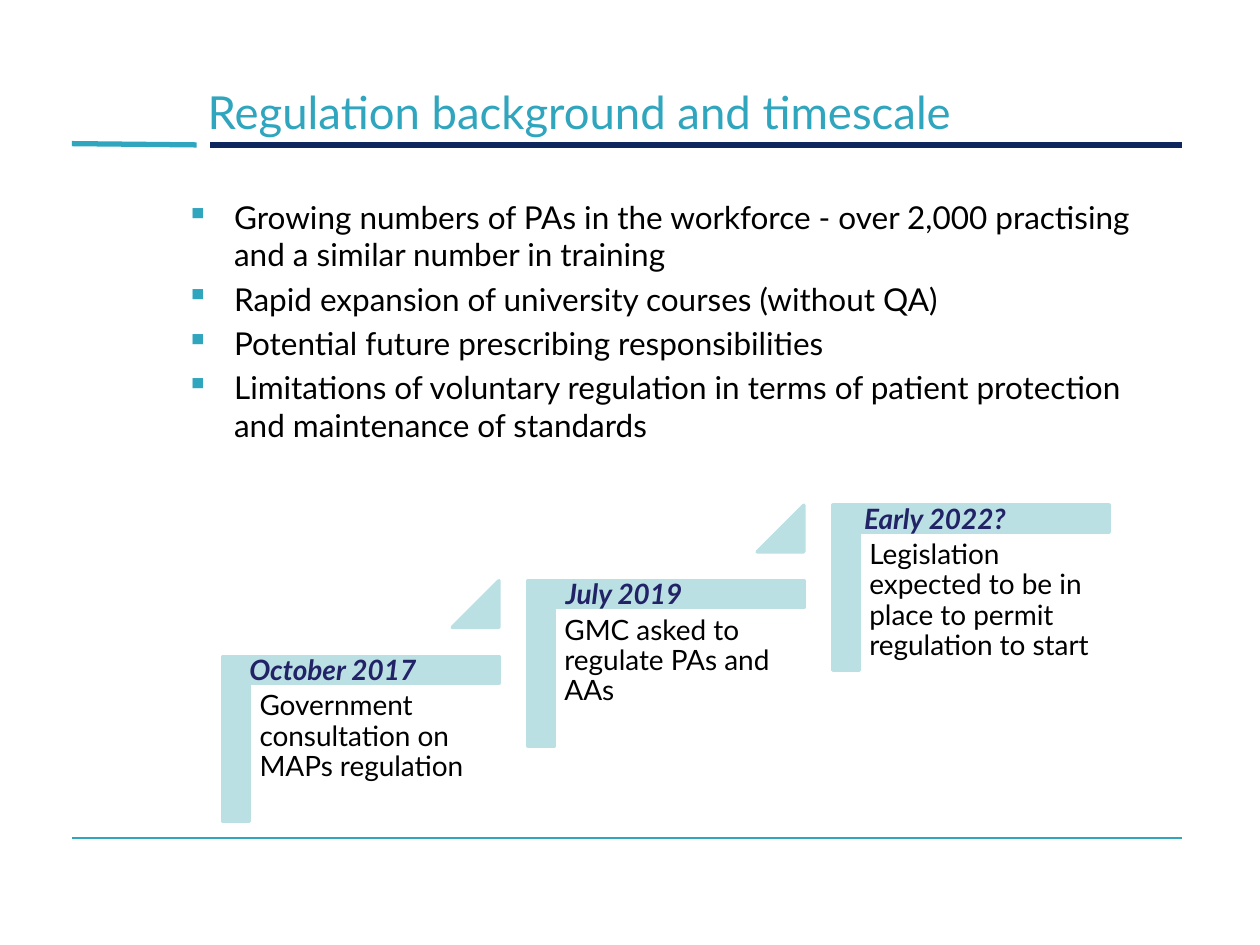
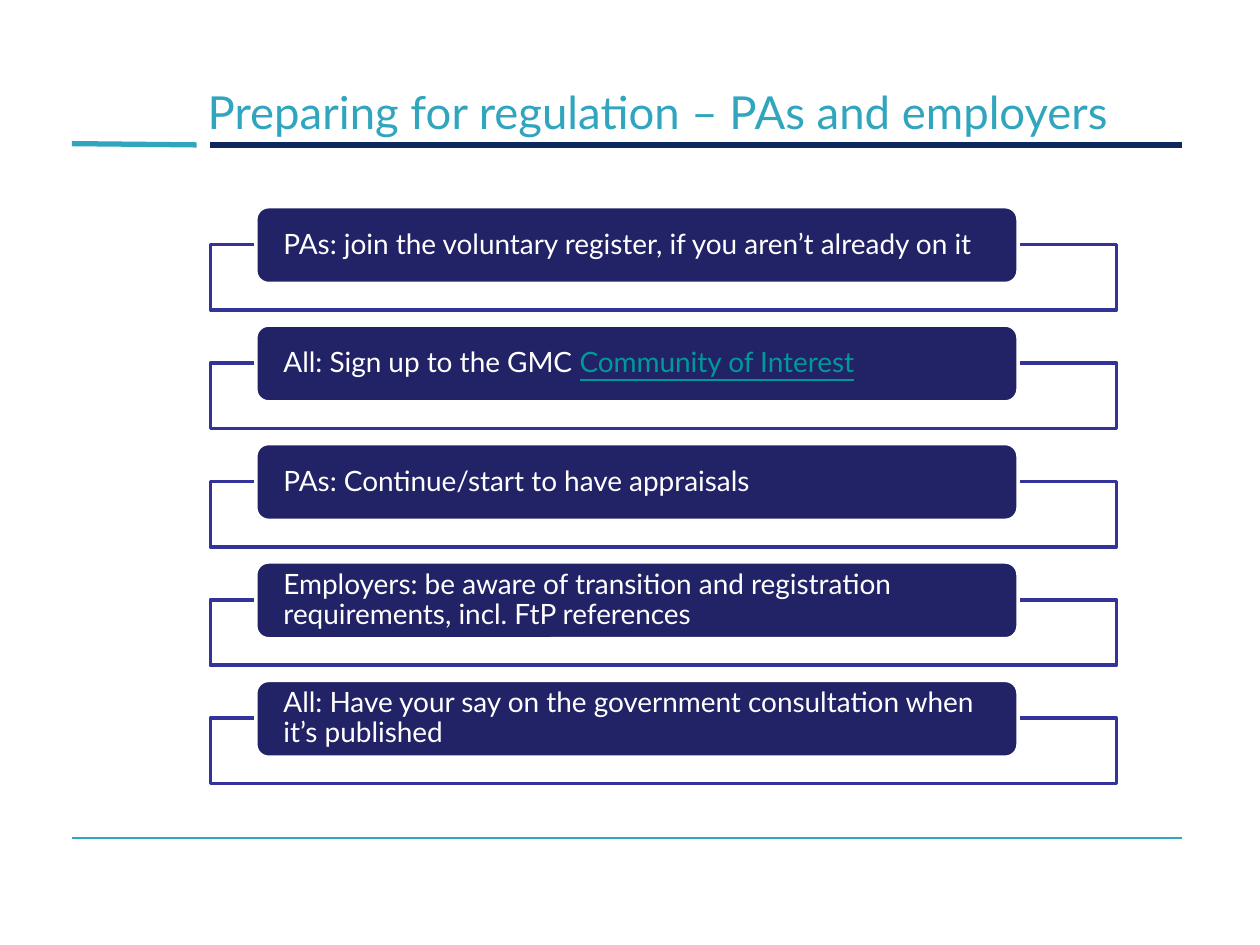
import pptx
import pptx.dml.color
import pptx.enum.shapes
import pptx.enum.text
import pptx.oxml
import pptx.oxml.ns
import pptx.util
from lxml import etree

Inches = pptx.util.Inches
Pt = pptx.util.Pt
RGBColor = pptx.dml.color.RGBColor
SHAPES = pptx.enum.shapes.MSO_SHAPE
ANCHORS = pptx.enum.text.MSO_ANCHOR

FONT = "Lato"
TEAL = RGBColor(0x30, 0xA5, 0xBE)
NAVY = RGBColor(0x0E, 0x28, 0x5E)
INDIGO = RGBColor(0x22, 0x22, 0x67)
FRAME_BLUE = RGBColor(0x33, 0x33, 0x99)
PALE_TEAL = RGBColor(0xBB, 0xE0, 0xE3)
LINK_GREEN = RGBColor(0x00, 0x99, 0x99)
BLACK = RGBColor(0, 0, 0)
WHITE = RGBColor(0xFF, 0xFF, 0xFF)

RULES = [  # start x, start y, end x, end y, colour, width in points
    (1.67, 1.15, 9.38, 1.15, NAVY, 3),
    (0.57, 1.14, 1.56, 1.15, TEAL, 3),
    (0.57, 6.65, 9.38, 6.65, TEAL, 0.75),
]

BACKGROUND_POINTS = [
    "Growing numbers of PAs in the workforce - over 2,000 practising and a similar number in training",
    "Rapid expansion of university courses (without QA)",
    "Potential future prescribing responsibilities",
    "Limitations of voluntary regulation in terms of patient protection and maintenance of standards",
]

TIMELINE = [  # date, indent of the date, event
    ("October 2017", 0.11, "Government consultation on MAPs regulation"),
    ("July 2019", 0.2, "GMC asked to regulate PAs and AAs"),
    ("Early 2022?", 0.15, "Legislation expected to be in place to permit regulation to start"),
]

ACTIONS = [  # plain text, link-styled text
    ("PAs: join the voluntary register, if you aren’t already on it", ""),
    ("All: Sign up to the GMC ", "Community of Interest"),
    ("PAs: Continue/start to have appraisals", ""),
    ("Employers: be aware of transition and registration requirements, incl. FtP references", ""),
    ("All: Have your say on the government consultation when it’s published", ""),
]


def add_run(paragraph, text, size, color, **font_values):
    run = paragraph.add_run()
    run.text = text
    run.font.color.rgb = color
    for name, value in {"name": FONT, "size": Pt(size), **font_values}.items():
        setattr(run.font, name, value)


def set_frame(frame, horizontal=0.1, vertical=0.05, anchor=ANCHORS.TOP):
    values = {
        "word_wrap": True,
        "vertical_anchor": anchor,
        "margin_left": Inches(horizontal),
        "margin_right": Inches(horizontal),
        "margin_top": Inches(vertical),
        "margin_bottom": Inches(vertical),
    }
    for name, value in values.items():
        setattr(frame, name, value)


def add_text_frame(slide, left, top, width, height, **frame_values):
    box = slide.shapes.add_textbox(Inches(left), Inches(top), Inches(width), Inches(height))
    set_frame(box.text_frame, **frame_values)
    return box.text_frame


def add_shape(slide, kind, left, top, width, height, fill, line, adjustments=()):
    shape = slide.shapes.add_shape(kind, Inches(left), Inches(top), Inches(width), Inches(height))
    shape.shadow.inherit = False
    shape.fill.solid()
    shape.fill.fore_color.rgb = fill
    shape.line.color.rgb = line
    shape.line.width = Pt(2)
    for index, value in enumerate(adjustments):
        shape.adjustments[index] = value
    return shape


def set_opacity(shape, percent):
    color = shape.fill._xPr.find(".//" + pptx.oxml.ns.qn("a:srgbClr"))
    etree.SubElement(color, pptx.oxml.ns.qn("a:alpha"), val=str(percent * 1000))


def add_rule(slide, start_x, start_y, end_x, end_y, color, width):
    rule = slide.shapes.add_connector(
        pptx.enum.shapes.MSO_CONNECTOR.STRAIGHT,
        Inches(start_x), Inches(start_y), Inches(end_x), Inches(end_y))
    rule.line.color.rgb = color
    rule.line.width = Pt(width)
    etree.SubElement(rule._element.spPr, pptx.oxml.ns.qn("a:effectLst"))


def set_bullet(paragraph, symbol, color, indent):
    properties = paragraph._p.get_or_add_pPr()
    properties.set("marL", str(Inches(indent)))
    properties.set("indent", str(-Inches(indent)))
    bullet_color = etree.SubElement(properties, pptx.oxml.ns.qn("a:buClr"))
    etree.SubElement(bullet_color, pptx.oxml.ns.qn("a:srgbClr"), val=str(color))
    etree.SubElement(properties, pptx.oxml.ns.qn("a:buChar"), char=symbol)


def add_titled_slide(presentation, title):
    slide = presentation.slides.add_slide(presentation.slide_layouts[6])
    for rule in RULES:
        add_rule(slide, *rule)
    frame = add_text_frame(slide, 1.55, 0.52, 7.83, 0.73, anchor=ANCHORS.MIDDLE)
    add_run(frame.paragraphs[0], title, 26, TEAL)
    return slide


def add_bullet_list(slide, left, top, width, height, points):
    frame = add_text_frame(slide, left, top, width, height)
    for index, point in enumerate(points):
        paragraph = frame.add_paragraph() if index else frame.paragraphs[0]
        set_bullet(paragraph, "▪", TEAL, 0.38)
        paragraph.space_before = Pt(3.6 if index else 0)
        add_run(paragraph, point, 18, BLACK)


def add_timeline_step(slide, left, top, date, date_indent, event):
    width, height = 2.19, 1.31
    # The corner is turned a quarter, so its unturned box swaps width and height.
    corner = add_shape(
        slide, SHAPES.CORNER, left + (width - height) / 2, top - (width - height) / 2,
        height, width, PALE_TEAL, PALE_TEAL, (0.161, 0.161))
    corner.rotation = 90
    event_frame = add_text_frame(
        slide, left + 0.22, top + 0.21, 1.97, 1.73, horizontal=0.07, vertical=0.07)
    paragraph = event_frame.paragraphs[0]
    paragraph.line_spacing = 0.9
    add_run(paragraph, event, 16, BLACK)
    date_frame = add_text_frame(slide, left + date_indent, top - 0.08, width, 0.37)
    add_run(date_frame.paragraphs[0], date, 16, INDIGO, bold=True, italic=True)


def add_timeline(slide, left, top, steps):
    """Place the steps rising to the right from the lowest step's corner."""
    advance, rise = 2.42, 0.6
    for index, step in enumerate(steps):
        step_left, step_top = left + index * advance, top - index * rise
        add_timeline_step(slide, step_left, step_top, *step)
        if index < len(steps) - 1:
            add_shape(slide, SHAPES.ISOSCELES_TRIANGLE, step_left + 1.82, step_top - 0.6,
                      0.37, 0.37, PALE_TEAL, PALE_TEAL, (1,))


def add_action(slide, left, top, text, link_text):
    frame = add_shape(slide, SHAPES.RECTANGLE, left, top + 0.3, 7.19, 0.52, WHITE, FRAME_BLUE)
    set_opacity(frame, 90)
    label = add_shape(slide, SHAPES.ROUNDED_RECTANGLE, left + 0.36, top, 6.05, 0.61, INDIGO, WHITE)
    set_frame(label.text_frame, horizontal=0.19, vertical=0, anchor=ANCHORS.MIDDLE)
    paragraph = label.text_frame.paragraphs[0]
    paragraph.alignment = pptx.enum.text.PP_ALIGN.LEFT
    paragraph.line_spacing = 0.9
    add_run(paragraph, text, 16, WHITE)
    if link_text:
        add_run(paragraph, link_text, 16, LINK_GREEN, underline=True)


def add_action_list(slide, left, top, actions):
    for index, action in enumerate(actions):
        add_action(slide, left, top + index * 0.94, *action)


def main():
    presentation = pptx.Presentation()
    presentation.slide_width = Inches(10)
    presentation.slide_height = Inches(7.5)

    background = add_titled_slide(presentation, "Regulation background and timescale")
    add_bullet_list(background, 1.38, 1.52, 7.76, 4.96, BACKGROUND_POINTS)
    add_timeline(background, 1.77, 5.21, TIMELINE)

    preparing = add_titled_slide(presentation, "Preparing for regulation – PAs and employers")
    add_action_list(preparing, 1.67, 1.64, ACTIONS)

    presentation.save("out.pptx")


if __name__ == "__main__":
    main()
